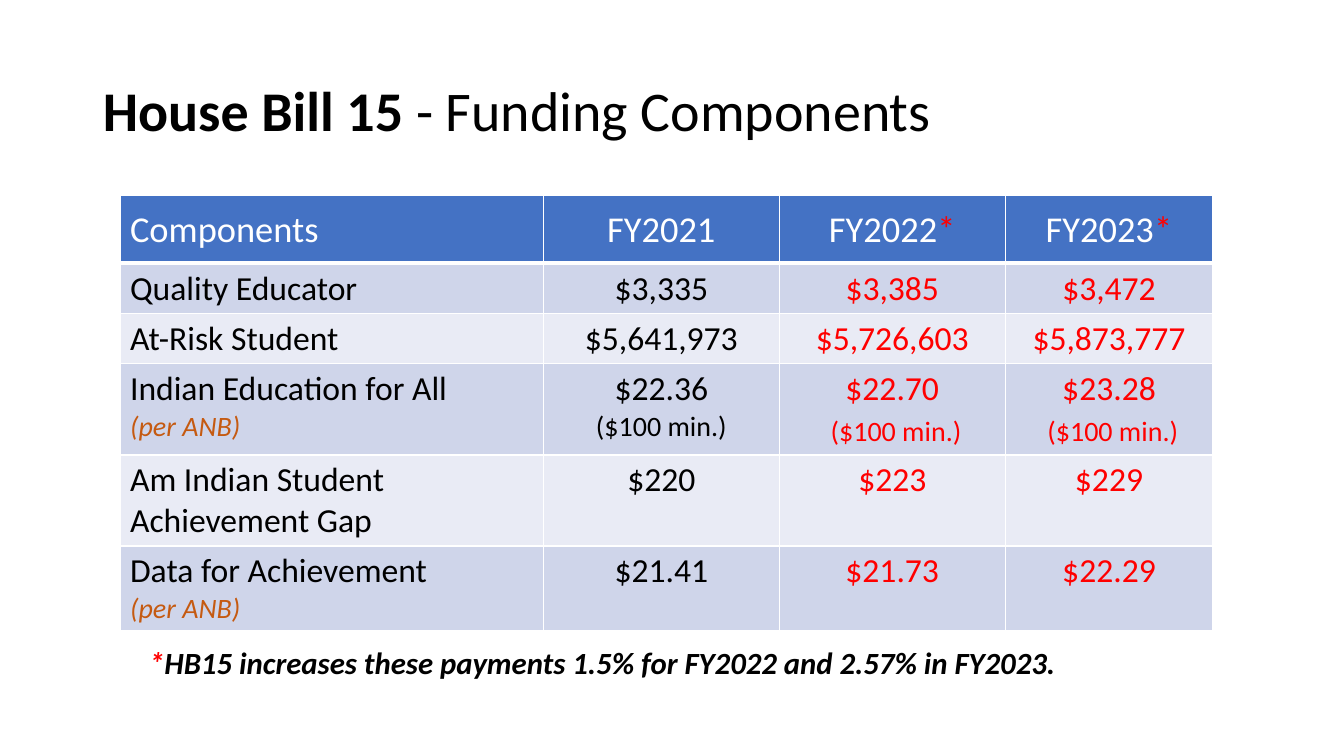
from dataclasses import dataclass

from lxml.etree import SubElement
from pptx import Presentation
from pptx.dml.color import RGBColor
from pptx.enum.text import MSO_ANCHOR, MSO_AUTO_SIZE, PP_ALIGN
from pptx.oxml.ns import qn
from pptx.util import Pt

SCALE = 9144  # EMU in one px, 100 px to the inch


@dataclass(frozen=True)
class Theme:
    font: str = "Calibri"
    black: str = "000000"
    white: str = "FFFFFF"
    red: str = "FF0000"
    rust: str = "C55A11"
    head: str = "4472C4"
    bands: tuple = ("CFD5EA", "E9EBF5")
    title: int = 40
    label: int = 26
    body: int = 24
    note: int = 22
    small: int = 20


LOOK = Theme()
MIN = "($100 min.)"
ANB = "(per ANB)"
YEARS = ("FY2021", "FY2022", "FY2023")
# Component, small line under it, value per year, small line under values
FUNDS = [
    ("Quality Educator", "", ("$3,335", "$3,385", "$3,472"), ""),
    ("At-Risk Student", "", ("$5,641,973", "$5,726,603", "$5,873,777"), ""),
    ("Indian Education for All", ANB, ("$22.36", "$22.70", "$23.28"), MIN),
    ("Am Indian Student Achievement Gap", "", ("$220", "$223", "$229"), ""),
    ("Data for Achievement", ANB, ("$21.41", "$21.73", "$22.29"), ""),
]
COLS = (420, 234, 224, 206)
ROWS = (67, 50, 50, 90, 90, 83)


def px(num):
    return num * SCALE


def place(shape, left, top, width, height):
    box = {"left": left, "top": top, "width": width, "height": height}
    for key, num in box.items():
        setattr(shape, key, px(num))


def run(text, size, color, **style):
    return text, size, color, style


def write(frame, lines, align=PP_ALIGN.LEFT, space=None):
    """Fill a text frame with lines, each a list of runs."""
    for i, line in enumerate(lines):
        para = frame.paragraphs[0] if i == 0 else frame.add_paragraph()
        para.alignment = align
        para.line_spacing = space
        for text, size, color, style in line:
            part = para.add_run()
            part.text = text
            part.font.color.rgb = RGBColor.from_string(color)
            form = {"name": LOOK.font, "size": Pt(size),
                    "bold": False, "italic": False, **style}
            for key, value in form.items():
                setattr(part.font, key, value)


def edge(cell, row):
    """Draw white cell borders, thick between head and body."""
    props = cell._tc.get_or_add_tcPr()
    wide = {"lnL": 1, "lnR": 1,
            "lnT": 3 if row == 1 else 1, "lnB": 3 if row == 0 else 1}
    for tag, points in wide.items():
        line = SubElement(props, qn("a:" + tag), w=str(Pt(points)))
        fill = SubElement(line, qn("a:solidFill"))
        SubElement(fill, qn("a:srgbClr"), val=LOOK.white)


def put(cell, row, col, lines):
    edge(cell, row)
    cell.fill.solid()
    color = LOOK.bands[(row - 1) % 2] if row else LOOK.head
    cell.fill.fore_color.rgb = RGBColor.from_string(color)
    form = {"margin_left": px(10), "margin_right": px(10),
            "margin_top": px(5), "margin_bottom": px(4),
            "vertical_anchor": MSO_ANCHOR.TOP if row else MSO_ANCHOR.MIDDLE}
    for key, value in form.items():
        setattr(cell, key, value)
    write(cell.text_frame, lines, PP_ALIGN.CENTER if col else PP_ALIGN.LEFT)


def heads():
    """Give the header cells; changed years carry a red star."""
    yield [[run("Components", LOOK.label, LOOK.white)]]
    for i, year in enumerate(YEARS):
        line = [run(year, LOOK.label, LOOK.white)]
        if i:
            line.append(run("*", LOOK.label, LOOK.red))
        yield [line]


def cells(name, unit, values, least):
    """Give the cells of one component; changed years are red."""
    lines = [[run(name, LOOK.body, LOOK.black)]]
    if unit:
        lines.append([run(unit, LOOK.small, LOOK.rust, italic=True)])
    yield lines
    for i, value in enumerate(values):
        color = LOOK.red if i else LOOK.black
        lines = [[run(value, LOOK.body, color)]]
        if least:
            lead = [run(" ", LOOK.body, color)] if i else []
            lines.append(lead + [run(least, LOOK.small, color)])
        yield lines


def add_title(slide):
    title = slide.shapes.title
    place(title, 92, 40, 1150, 145)
    frame = title.text_frame
    frame.auto_size = MSO_AUTO_SIZE.NONE
    frame.vertical_anchor = MSO_ANCHOR.MIDDLE
    write(frame, [[run("House Bill 15 ", LOOK.title, LOOK.black, bold=True),
                   run("- Funding Components", LOOK.title, LOOK.black)]],
          space=0.9)


def add_grid(slide):
    area = (119, 194, sum(COLS), sum(ROWS))
    grid = slide.shapes.add_table(len(ROWS), len(COLS), *map(px, area)).table
    for col, width in zip(grid.columns, COLS):
        col.width = px(width)
    for row, height in zip(grid.rows, ROWS):
        row.height = px(height)
    for r, line in enumerate([heads(), *(cells(*fund) for fund in FUNDS)]):
        for c, lines in enumerate(line):
            put(grid.cell(r, c), r, c, lines)


def add_note(slide):
    box = slide.shapes.add_textbox(*map(px, (138, 634, 929, 47)))
    box.text_frame.word_wrap = True
    style = {"bold": True, "italic": True}
    text = "HB15 increases these payments 1.5% for FY2022 and 2.57% in FY2023."
    write(box.text_frame, [[run("*", LOOK.note, LOOK.red, **style),
                            run(text, LOOK.note, LOOK.black, **style)]])


def main():
    deck = Presentation()
    deck.slide_width, deck.slide_height = px(1333), px(750)
    slide = deck.slides.add_slide(deck.slide_layouts[5])
    add_title(slide)
    add_grid(slide)
    add_note(slide)
    deck.save("out.pptx")


if __name__ == "__main__":
    main()
